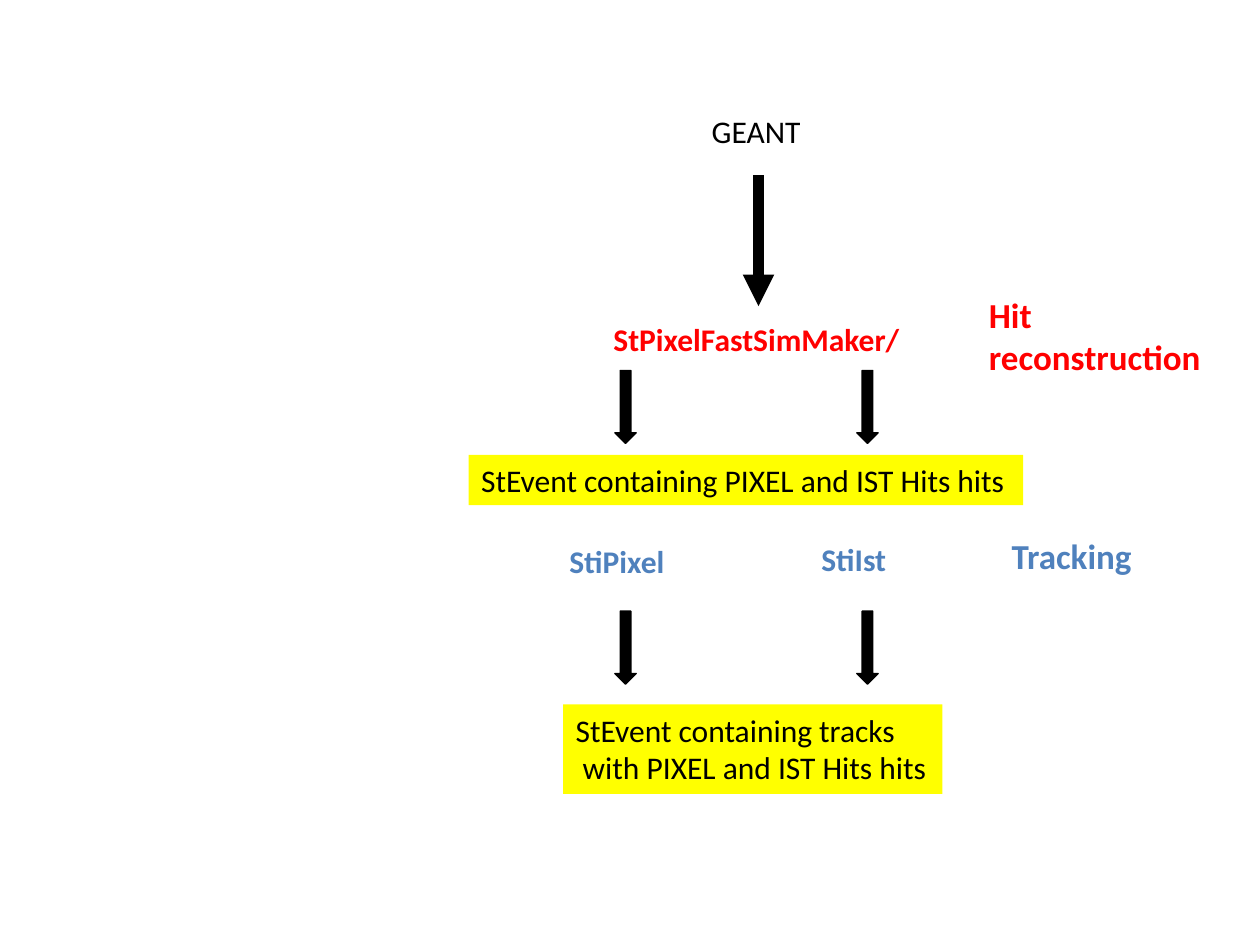
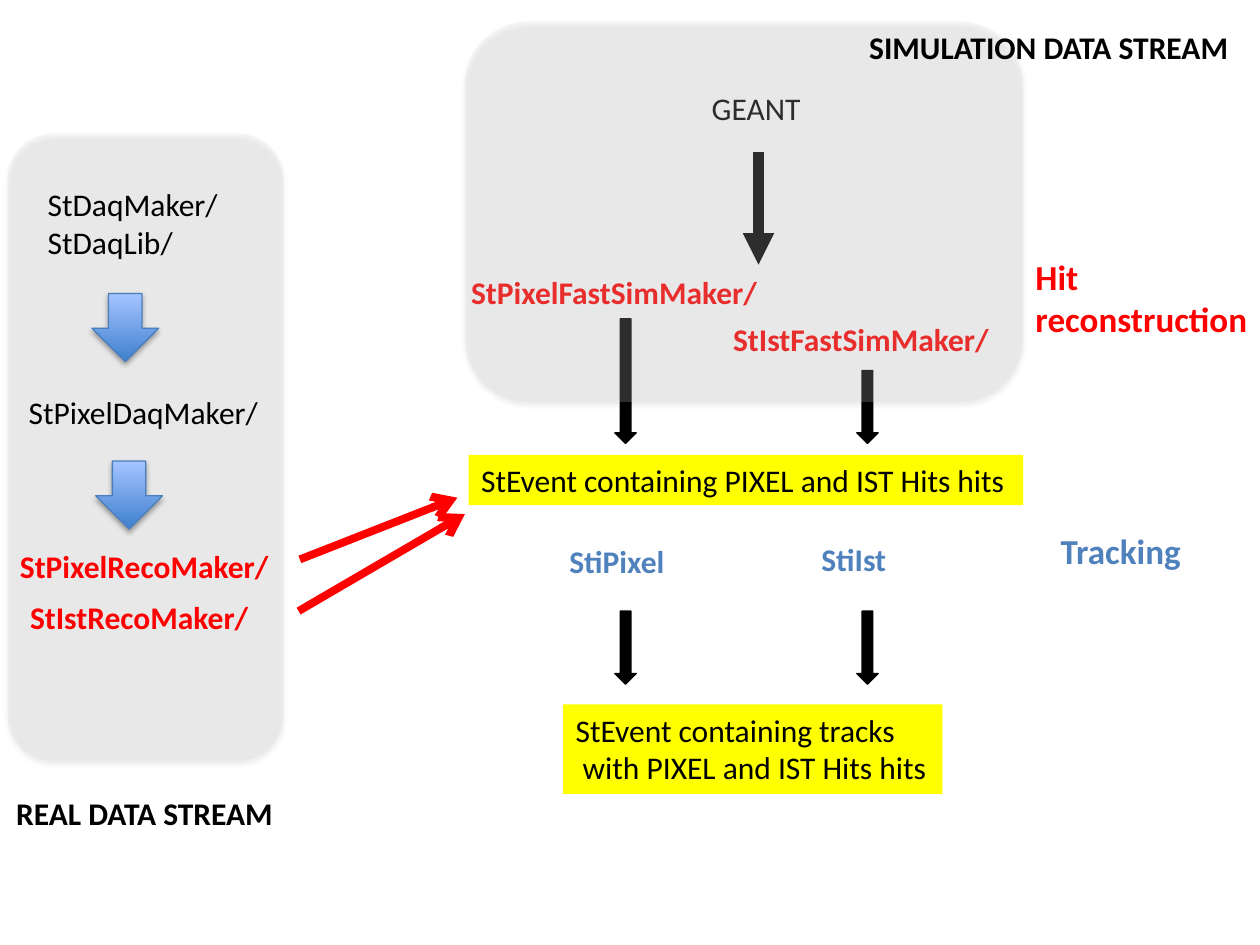
from dataclasses import dataclass
from lxml.etree import SubElement
from pptx import Presentation
from pptx.dml.color import RGBColor as Color
from pptx.enum.shapes import MSO_CONNECTOR as Connector, MSO_SHAPE as Preset
from pptx.enum.text import MSO_AUTO_SIZE as AutoSize
from pptx.oxml.ns import qn
from pptx.util import Inches, Pt


@dataclass(frozen=True)
class Theme:
    font: str = "Calibri"
    body: int = 18
    stage: int = 20
    black: Color = Color(0, 0, 0)
    red: Color = Color(0xFF, 0, 0)
    blue: Color = Color(0x4F, 0x81, 0xBD)
    yellow: Color = Color(0xFF, 0xFF, 0)
    panel: Color = Color(0xD9, 0xD9, 0xD9)
    arrow_dark: Color = Color(0x3F, 0x80, 0xCE)
    arrow_light: Color = Color(0xA4, 0xC4, 0xFF)
    arrow_edge: Color = Color(0x4B, 0x7E, 0xBC)


theme = Theme()
deck = Presentation()
deck.slide_width, deck.slide_height = Inches(10), Inches(7.5)
COLUMN = deck.slide_width / 10
ROW = deck.slide_height / 7.5
LINE_HEIGHTS = {theme.body: (0.4, 0.71), theme.stage: (0.44, 0.77)}


def add_label(page, text, left, top, width, color=theme.black, bold=False,
              size=theme.body, fill=None):
    lines = text.split("\n")
    height = LINE_HEIGHTS[size][len(lines) - 1]
    box = page.shapes.add_textbox(int(left * COLUMN), int(top * ROW),
                                  int(width * COLUMN), int(height * ROW))
    frame = box.text_frame
    frame.text = text
    frame.word_wrap = fill is not None
    frame.auto_size = AutoSize.SHAPE_TO_FIT_TEXT
    for para in frame.paragraphs:
        para.font.name, para.font.size = theme.font, Pt(size)
        para.font.bold, para.font.color.rgb = bold, color
    if fill is not None:
        box.fill.solid()
        box.fill.fore_color.rgb = fill


def add_line_arrow(page, start, end, color, weight, head):
    arrow = page.shapes.add_connector(
        Connector.STRAIGHT, int(start[0] * COLUMN), int(start[1] * ROW),
        int(end[0] * COLUMN), int(end[1] * ROW))
    arrow.line.color.rgb, arrow.line.width = color, Pt(weight)
    properties = arrow._element.spPr
    SubElement(properties.find(qn("a:ln")), qn("a:tailEnd"), type=head)
    SubElement(properties, qn("a:effectLst"))


# Each flow: GEANT top, its arrow's end, pixel arrow top, hit makers, stage labels
flows = [
    (0.84, 2.43, 2.94, [("StPixelFastSimMaker/", 4.77, 2.49, 2.49)],
     (7.75, 2.28), (7.93, 4.19)),
    (0.66, 2.1, 2.53, [("StPixelFastSimMaker/", 3.64, 2.12, 2.49),
                       ("StIstFastSimMaker/", 5.72, 2.49, 2.25)],
     (8.12, 1.98), (8.32, 4.15)),
]
PIXEL, IST = 4.88, 6.8
HITS_ARROW_END, TRACKS_ARROW_TOP, TRACKS_ARROW_END = 3.52, 4.85, 5.43

for geant_top, geant_end, pixel_top, makers, hit_stage, tracking_stage in flows:
    page = deck.slides.add_slide(deck.slide_layouts[6])
    add_label(page, "GEANT", 5.55, geant_top, 0.92)
    add_line_arrow(page, (6.02, geant_top + 0.55), (6.02, geant_end),
                   theme.black, 6, "triangle")
    for maker in makers:
        add_label(page, *maker, theme.red, True)

    for left, top, bottom in [(PIXEL, pixel_top, HITS_ARROW_END),
                              (IST, 2.94, HITS_ARROW_END),
                              (PIXEL, TRACKS_ARROW_TOP, TRACKS_ARROW_END),
                              (IST, TRACKS_ARROW_TOP, TRACKS_ARROW_END)]:
        arrow = page.shapes.add_shape(
            Preset.DOWN_ARROW, int(left * COLUMN), int(top * ROW),
            int(0.17 * COLUMN), int((bottom - top) * ROW))
        arrow.shadow.inherit = False
        arrow.fill.solid()
        arrow.fill.fore_color.rgb = arrow.line.color.rgb = theme.black
        arrow.line.width = Pt(0.75)

    add_label(page, "StEvent containing PIXEL and IST Hits hits",
              3.72, 3.61, 4.4, fill=theme.yellow)
    add_label(page, "StiPixel", 4.42, 4.25, 0.96, theme.blue, True)
    add_label(page, "StiIst", 6.42, 4.24, 0.72, theme.blue, True)
    add_label(page, "StEvent containing tracks\n with PIXEL and IST Hits hits",
              4.47, 5.59, 3.01, fill=theme.yellow)
    add_label(page, "Hit\nreconstruction", *hit_stage, 1.9,
              theme.red, True, theme.stage)
    add_label(page, "Tracking", *tracking_stage, 1.16,
              theme.blue, True, theme.stage)

# The second page also shows the two data streams
for preset, left, top, width, height in [
        (Preset.ROUNDED_RECTANGLE, 0.06, 1.06, 2.19, 4.98),
        (Preset.ROUNDED_RECTANGLE, 3.69, 0.17, 4.43, 3.02),
        (Preset.DOWN_ARROW, 0.73, 2.33, 0.53, 0.54),
        (Preset.DOWN_ARROW, 0.76, 3.66, 0.53, 0.54)]:
    shape = page.shapes.add_shape(preset, int(left * COLUMN), int(top * ROW),
                                  int(width * COLUMN), int(height * ROW))
    properties = shape._element.spPr
    if preset == Preset.DOWN_ARROW:
        shape.fill.gradient()
        shape.fill.gradient_angle = 90
        for stop, color in zip(shape.fill.gradient_stops,
                               (theme.arrow_dark, theme.arrow_light)):
            stop.color.rgb = color
        shape.line.color.rgb, shape.line.width = theme.arrow_edge, Pt(0.75)
    else:
        shape.fill.solid()
        shape.fill.fore_color.rgb = theme.panel
        SubElement(properties.find(qn("a:solidFill"))[0], qn("a:alpha"), val="21000")
        shape.line.fill.background()
    shape.shadow.inherit = False
    shadow = SubElement(properties.find(qn("a:effectLst")), qn("a:outerShdw"),
                        blurRad=str(Pt(3.1)), dist=str(Pt(1.8)),
                        dir="5400000", rotWithShape="0")
    shade = SubElement(shadow, qn("a:srgbClr"), val=str(theme.black))
    SubElement(shade, qn("a:alpha"), val="35000")

add_label(page, "StDaqMaker/\nStDaqLib/", 0.28, 1.42, 1.57)
add_label(page, "StPixelDaqMaker/", 0.13, 3.07, 2.04)
add_label(page, "StPixelRecoMaker/", 0.06, 4.29, 2.19, theme.red, True)
add_label(page, "StIstRecoMaker/", 0.14, 4.7, 1.95, theme.red, True)
for start, end in [((2.38, 4.44), (3.63, 3.95)), ((2.37, 4.85), (3.69, 4.08))]:
    add_line_arrow(page, start, end, theme.red, 4.5, "arrow")
add_label(page, "REAL DATA STREAM", 0.03, 6.25, 2.26, bold=True)
add_label(page, "SIMULATION DATA STREAM", 6.8, 0.17, 3.08, bold=True)

deck.save("out.pptx")
